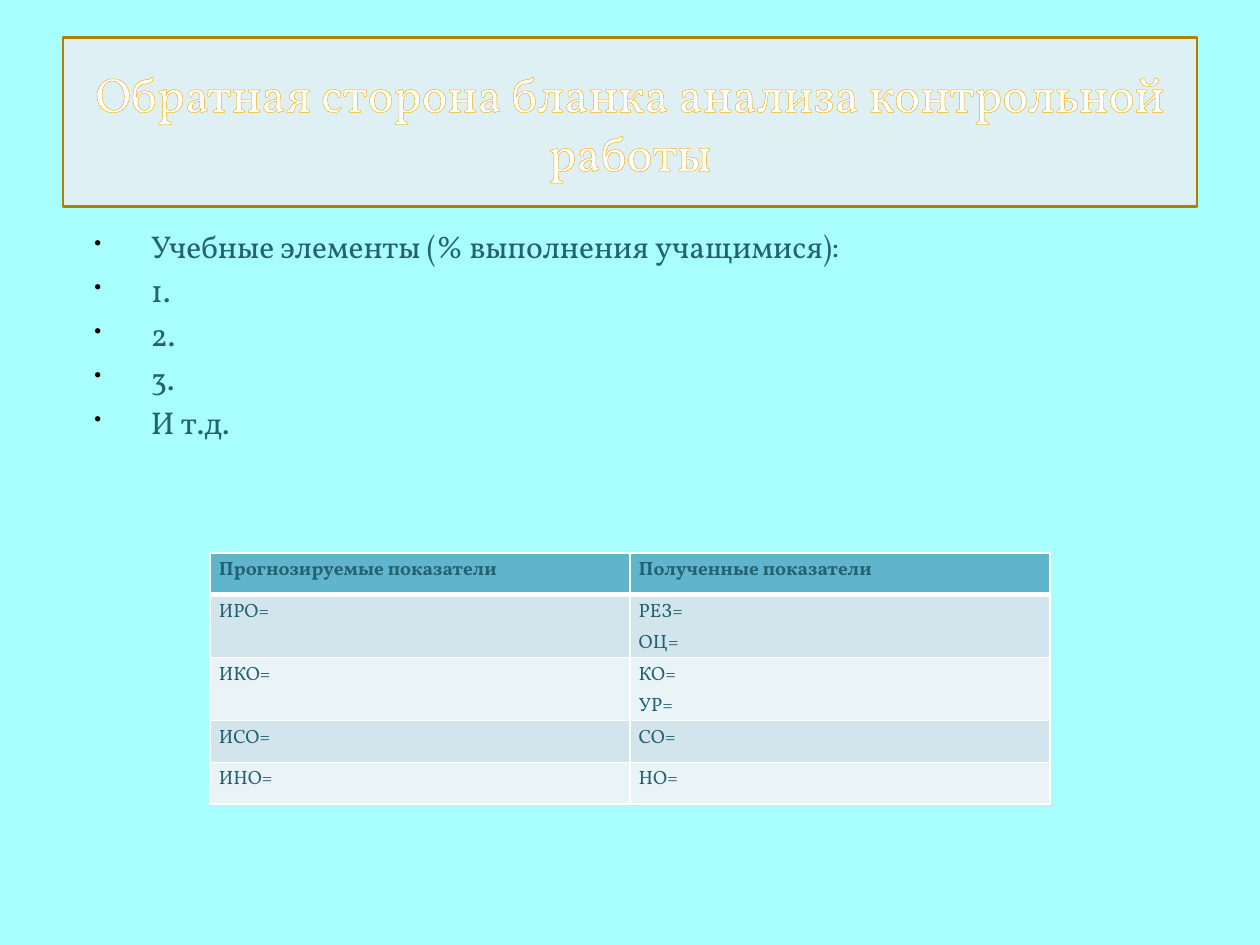
from pptx import Presentation
from pptx.dml.color import RGBColor
from pptx.enum.shapes import MSO_SHAPE
from pptx.enum.text import MSO_ANCHOR, PP_ALIGN
from pptx.oxml import parse_xml
from pptx.oxml.ns import nsdecls
from pptx.util import Inches, Pt

RECT = MSO_SHAPE.RECTANGLE
MIDDLE, TOP = MSO_ANCHOR.MIDDLE, MSO_ANCHOR.TOP
CENTER = PP_ALIGN.CENTER

FONT = "Vollkorn"
INK, WHITE = "246172", "FFFFFF"
HEADER_FILL, BANDS = "60B5CC", ("D2E5EC", "EAF3F6")

TITLE = "Обратная сторона бланка анализа контрольной работы"
ITEMS = ["Учебные элементы (% выполнения учащимися):", "1.", "2.", "3.", "И т.д."]
ROWS = [
    (["Прогнозируемые показатели"], ["Полученные показатели"]),
    (["ИРО="], ["РЕЗ=", "ОЦ="]),
    (["ИКО="], ["КО=", "УР="]),
    (["ИСО="], ["СО="]),
    (["ИНО="], ["НО="]),
]

W, H = 10, 7.5
MARGIN = W / 20
TABLE_W = W * 2 / 3
ROW_HEIGHTS = {1: 0.33, 2: 0.5}


def color(value):
    return RGBColor.from_string(value)


def fill(obj, value):
    obj.fill.solid()
    obj.fill.fore_color.rgb = color(value)


def add_paragraphs(tf, lines, size, ink, bold=False):
    for i, line in enumerate(lines):
        p = tf.paragraphs[0] if i == 0 else tf.add_paragraph()
        r = p.add_run()
        r.text = line
        r.font.name, r.font.size, r.font.bold = FONT, Pt(size), bold
        r.font.color.rgb = color(ink)
    return tf.paragraphs


def line_xml(tag, value, width):
    return parse_xml(
        f'<a:{tag} {nsdecls("a")} w="{Pt(width)}"><a:solidFill>'
        f'<a:srgbClr val="{value}"/></a:solidFill></a:{tag}>')


def add_bullet(p):
    pPr = p._p.get_or_add_pPr()
    pPr.set("marL", str(Inches(0.6)))
    pPr.set("indent", str(Inches(-0.45)))
    ns = nsdecls("a")
    for xml in (f'<a:buClr {ns}><a:srgbClr val="000000"/></a:buClr>',
                f'<a:buSzPct {ns} val="65000"/>',
                f'<a:buChar {ns} char="•"/>'):
        pPr.append(parse_xml(xml))


def add_title(s):
    sp = s.shapes.add_shape(RECT, Inches(MARGIN), Inches(0.3),
                            Inches(W - 2 * MARGIN), Inches(1.34))
    sp.shadow.inherit = False
    fill(sp, "DFF0F5")
    sp.line.color.rgb = color("B28000")
    sp.line.width = Pt(1.5)
    tf = sp.text_frame
    tf.word_wrap, tf.vertical_anchor = True, MIDDLE
    p = add_paragraphs(tf, [TITLE], 28, WHITE)[0]
    p.alignment = CENTER
    p.runs[0].font._element.insert(0, line_xml("ln", "F0AD00", 0.8))


def add_list(s):
    tf = s.shapes.add_textbox(Inches(MARGIN), Inches(1.75),
                              Inches(W - 2 * MARGIN), Inches(5.15)).text_frame
    tf.word_wrap = True
    for i, p in enumerate(add_paragraphs(tf, ITEMS, 18, INK)):
        p.space_before = Pt(3.6 if i else 0)
        add_bullet(p)


def add_indicators(s):
    heights = [ROW_HEIGHTS[max(map(len, row))] for row in ROWS]
    table = s.shapes.add_table(
        len(ROWS), 2, Inches((W - TABLE_W) / 2), Inches(4.39),
        Inches(TABLE_W), Inches(sum(heights))).table
    for i, row in enumerate(ROWS):
        table.rows[i].height = Inches(heights[i])
        for j, lines in enumerate(row):
            cell = table.cell(i, j)
            cell.margin_left = cell.margin_right = Inches(0.07)
            cell.margin_top = cell.margin_bottom = 0
            cell.vertical_anchor = TOP
            for p in add_paragraphs(cell.text_frame, lines, 11, INK, i == 0):
                p.line_spacing = 1.15
            fill(cell, BANDS[(i - 1) % 2] if i else HEADER_FILL)
            widths = {"lnL": 1, "lnR": 1, "lnT": 3 if i == 1 else 1,
                      "lnB": 1 if i else 3}
            for k, (tag, width) in enumerate(widths.items()):
                cell._tc.tcPr.insert(k, line_xml(tag, WHITE, width))


def main():
    prs = Presentation()
    prs.slide_width, prs.slide_height = Inches(W), Inches(H)
    s = prs.slides.add_slide(prs.slide_layouts[6])
    fill(s.background, "A8FEFC")
    add_list(s)
    add_title(s)
    add_indicators(s)
    prs.save("out.pptx")


if __name__ == "__main__":
    main()
